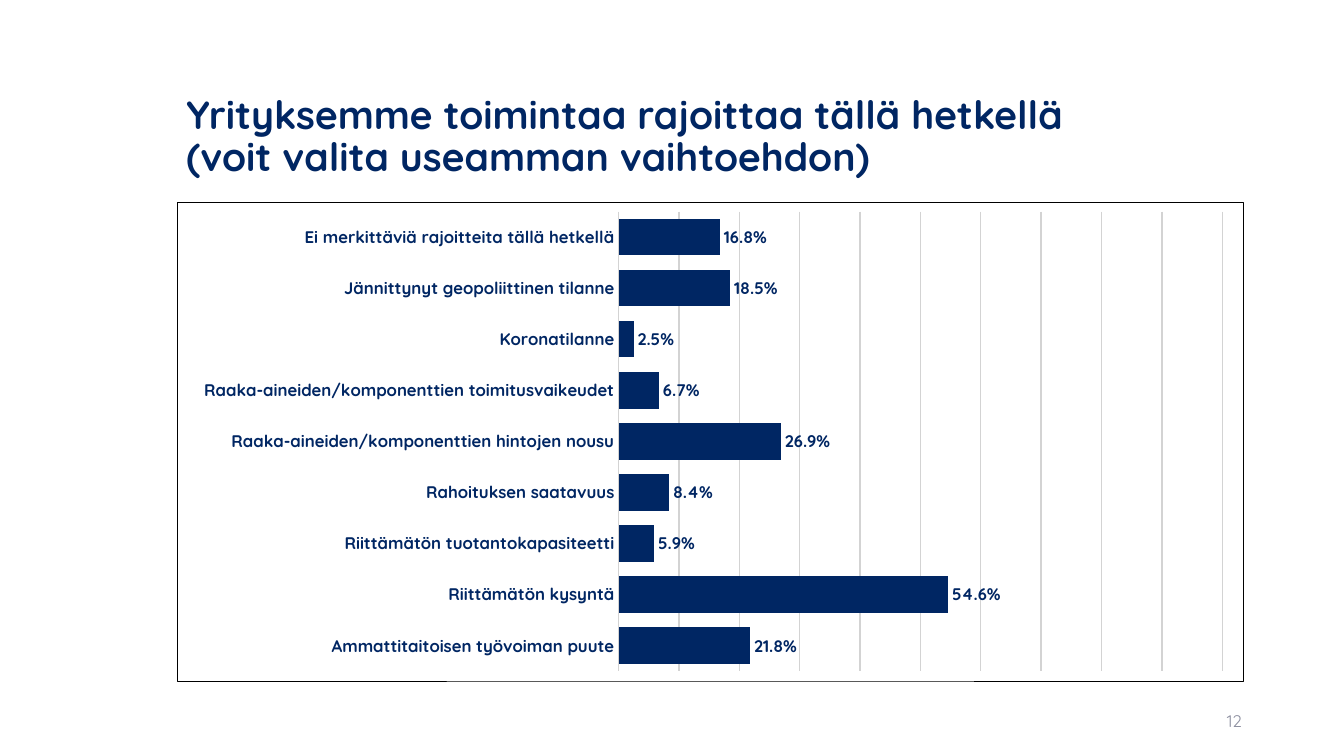
"""Builds a slide with a bar chart of what limits companies' operations."""
from dataclasses import dataclass

from lxml import etree
from pptx import Presentation
from pptx.chart.data import CategoryChartData
from pptx.dml.color import RGBColor
from pptx.enum.chart import XL_CHART_TYPE, XL_LABEL_POSITION, XL_TICK_MARK
from pptx.enum.text import MSO_ANCHOR, PP_ALIGN
from pptx.oxml import parse_xml
from pptx.oxml.ns import qn
from pptx.util import Cm, Pt

BAR_CLUSTERED = XL_CHART_TYPE.BAR_CLUSTERED
OUTSIDE_END = XL_LABEL_POSITION.OUTSIDE_END
NO_TICKS = XL_TICK_MARK.NONE
MIDDLE = MSO_ANCHOR.MIDDLE
LEFT, RIGHT = PP_ALIGN.LEFT, PP_ALIGN.RIGHT

TITLE_LINES = (
    "Yrityksemme toimintaa rajoittaa tällä hetkellä",
    "(voit valita useamman vaihtoehdon)",
)
PAGE_NUMBER = "12"
LIMITATIONS = {
    "Ammattitaitoisen työvoiman puute": 0.218,
    "Riittämätön kysyntä": 0.546,
    "Riittämätön tuotantokapasiteetti": 0.059,
    "Rahoituksen saatavuus": 0.084,
    "Raaka-aineiden/komponenttien hintojen nousu": 0.269,
    "Raaka-aineiden/komponenttien toimitusvaikeudet": 0.067,
    "Koronatilanne": 0.025,
    "Jännittynyt geopoliittinen tilanne": 0.185,
    "Ei merkittäviä rajoitteita tällä hetkellä": 0.168,
}
PERCENT = "0.0%"
CONTENT_LEFT, CONTENT_WIDTH = Cm(4.45), Cm(26.9)
PLOT_LAYOUT = {"x": 0.414, "y": 0.02, "w": 0.566, "h": 0.96}


@dataclass(frozen=True)
class Theme:
    """Colours, font and type sizes."""
    font: str = "Quicksand"
    navy: str = "002663"
    grey: str = "8C8E9F"
    grid: str = "D3D3D3"
    white: str = "FFFFFF"
    frame: str = "000000"
    title_size: int = 28
    small_size: int = 12


THEME = Theme()


def style_font(font, size, color, bold):
    """Sets the face, size, colour and weight of a font."""
    font.name, font.size, font.bold = THEME.font, Pt(size), bold
    font.color.rgb = RGBColor.from_string(color)


def add_text(slide, lines, box, *, size, color, bold=False, align=LEFT, spacing=1.0):
    """Adds lines of text, split by line breaks, in a vertically centred box."""
    frame = slide.shapes.add_textbox(*box).text_frame
    frame.word_wrap, frame.vertical_anchor = True, MIDDLE
    paragraph = frame.paragraphs[0]
    paragraph.alignment, paragraph.line_spacing = align, spacing
    for index, line in enumerate(lines):
        if index:
            paragraph.add_line_break()
        run = paragraph.add_run()
        run.text = line
        style_font(run.font, size, color, bold)


def chart_area_style(fill="", line=""):
    """Returns shape properties for a part of the chart."""
    def solid(color):
        return f'<a:solidFill><a:srgbClr val="{color}"/></a:solidFill>' if color else "<a:noFill/>"

    return parse_xml(
        '<c:spPr xmlns:c="http://schemas.openxmlformats.org/drawingml/2006/chart"'
        ' xmlns:a="http://schemas.openxmlformats.org/drawingml/2006/main">'
        f'{solid(fill)}<a:ln w="{Pt(0.5)}">{solid(line)}</a:ln></c:spPr>'
    )


def place_plot(plot_area):
    """Fixes the inner plot area within the chart."""
    for layout in plot_area.findall(qn("c:layout")):
        plot_area.remove(layout)
    layout = etree.Element(qn("c:layout"))
    manual = etree.SubElement(layout, qn("c:manualLayout"))
    settings = {"layoutTarget": "inner", "xMode": "edge", "yMode": "edge", **PLOT_LAYOUT}
    for tag, value in settings.items():
        etree.SubElement(manual, qn(f"c:{tag}")).set("val", str(value))
    plot_area.insert(0, layout)


def add_limitations_chart(slide, box):
    """Adds the framed bar chart."""
    data = CategoryChartData(number_format=PERCENT)
    data.categories = list(LIMITATIONS)
    data.add_series("Series 1", list(LIMITATIONS.values()))
    chart = slide.shapes.add_chart(BAR_CLUSTERED, *box, data).chart
    chart.has_title = chart.has_legend = False
    style_font(chart.font, THEME.small_size, THEME.navy, True)

    bars = chart.plots[0]
    bars.gap_width, bars.vary_by_categories = 40, False
    fill = bars.series[0].format.fill
    fill.solid()
    fill.fore_color.rgb = RGBColor.from_string(THEME.navy)
    bars.has_data_labels = True
    labels = bars.data_labels
    labels.show_value, labels.position = True, OUTSIDE_END
    labels.number_format, labels.number_format_is_linked = PERCENT, False
    style_font(labels.font, THEME.small_size, THEME.navy, True)

    categories, shares = chart.category_axis, chart.value_axis
    categories.format.line.fill.background()
    categories.major_tick_mark = NO_TICKS
    style_font(categories.tick_labels.font, THEME.small_size, THEME.navy, True)
    shares.minimum_scale, shares.maximum_scale, shares.major_unit = 0, 1, 0.1
    shares.visible, shares.has_major_gridlines = False, True
    grid = shares.major_gridlines.format.line
    grid.width, grid.color.rgb = Pt(1), RGBColor.from_string(THEME.grid)

    chart_part = chart.element.find(qn("c:chart"))
    plot_area = chart_part.find(qn("c:plotArea"))
    place_plot(plot_area)
    plot_area.append(chart_area_style(fill=THEME.white))
    chart_part.addnext(chart_area_style(line=THEME.frame))


def main():
    """Builds and saves the slide."""
    deck = Presentation()
    deck.slide_width, deck.slide_height = Cm(33.87), Cm(19.05)
    slide = deck.slides.add_slide(deck.slide_layouts[6])
    add_text(slide, TITLE_LINES, (CONTENT_LEFT, Cm(1.63), CONTENT_WIDTH, Cm(3.68)),
             size=THEME.title_size, color=THEME.navy, bold=True, spacing=0.9)
    add_text(slide, [PAGE_NUMBER], (Cm(23.93), Cm(17.65), Cm(7.62), Cm(1.02)),
             size=THEME.small_size, color=THEME.grey, align=RIGHT)
    add_limitations_chart(slide, (CONTENT_LEFT, Cm(5.08), CONTENT_WIDTH, Cm(12.09)))
    deck.save("out.pptx")


if __name__ == "__main__":
    main()
